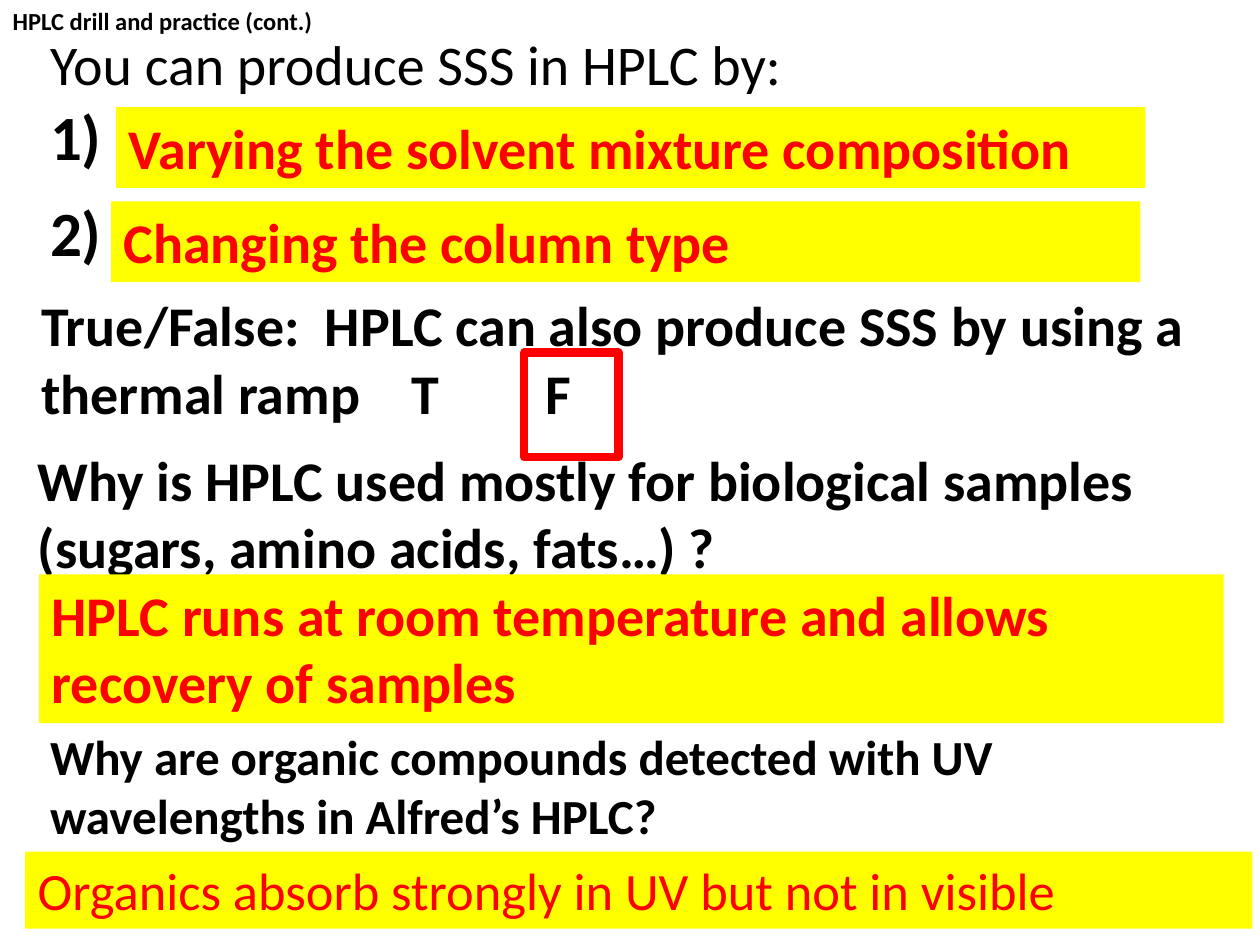
from lxml import etree
from pptx import Presentation
from pptx import util as u
from pptx.dml.color import RGBColor
from pptx.enum import shapes, text
from pptx.oxml.ns import qn

BLACK = RGBColor(0x00, 0x00, 0x00)
RED = RGBColor(0xFF, 0x00, 0x00)
YELLOW = RGBColor(0xFF, 0xFF, 0x00)
FONT = "Calibri"


def write_line(paragraph, words, size, color=BLACK, bold=True):
    paragraph.alignment = text.PP_ALIGN.LEFT
    run = paragraph.add_run()
    run.text = words
    run.font.name = FONT
    run.font.size = u.Pt(size)
    run.font.bold = bold
    run.font.color.rgb = color


def prepare_frame(shape):
    frame = shape.text_frame
    frame.word_wrap = True
    frame.auto_size = text.MSO_AUTO_SIZE.NONE
    frame.vertical_anchor = text.MSO_ANCHOR.TOP
    return frame


def lengths(*values):
    return [u.Cm(value) for value in values]


def add_prompt(slide, left, top, width, height, words, size=32, bold=True):
    shape = slide.shapes.add_textbox(*lengths(left, top, width, height))
    frame = prepare_frame(shape)
    write_line(frame.paragraphs[0], words, size, bold=bold)
    return frame


def add_rectangle(slide, left, top, width, height):
    shape = slide.shapes.add_shape(
        shapes.MSO_SHAPE.RECTANGLE, *lengths(left, top, width, height))
    shape.shadow.inherit = False
    return shape


def add_answer(slide, left, top, width, height, words, size=32, bold=True):
    shape = add_rectangle(slide, left, top, width, height)
    shape.fill.solid()
    shape.fill.fore_color.rgb = YELLOW
    shape.line.fill.background()
    write_line(prepare_frame(shape).paragraphs[0], words, size, RED, bold)


def place_title(slide, left, top, width, height):
    title = slide.shapes.title
    title.left, title.top, title.width, title.height = lengths(left, top, width, height)
    write_line(prepare_frame(title).paragraphs[0], "HPLC drill and practice (cont.)", 14)


def add_methods(slide, left, top):
    """Introduction and two numbered answers."""
    frame = add_prompt(slide, left, top, 17.15, 3.18,
                       "You can produce SSS in HPLC by:", bold=False)
    write_line(frame.add_paragraph(), "1)", 36)
    add_answer(slide, left + 1.58, top + 1.68, 20.75, 1.63,
               "Varying the solvent mixture composition")
    add_prompt(slide, left, top + 3.3, 2.11, 1.8, "2)", 36)
    add_answer(slide, left + 1.48, top + 3.58, 20.75, 1.63, "Changing the column type")


def add_true_false(slide, left, top, width, height):
    """Statement with the correct choice framed."""
    frame = add_prompt(
        slide, left, top, width, height,
        "True/False:  HPLC can also produce SSS by using a thermal ramp\tT\tF")
    # Tab stops line up the two choices
    properties = frame.paragraphs[0].runs[0].font  # run already formatted
    properties = frame.paragraphs[0]._p.get_or_add_pPr()
    tab_list = etree.SubElement(properties, qn("a:tabLst"))
    for position in (7.47, 10.16):
        etree.SubElement(tab_list, qn("a:tab"), pos=str(int(u.Cm(position))), algn="l")
    # Frame around F
    choice = add_rectangle(slide, left + 9.99, top + 1.37, 1.9, 2.11)
    choice.fill.background()
    choice.line.color.rgb = RED
    choice.line.width = u.Pt(4.75)


def add_biology_question(slide, left, top):
    add_prompt(slide, left, top, 23.93, 3,
               "Why is HPLC used mostly for biological samples "
               "(sugars, amino acids, fats…) ?")
    add_answer(slide, left + 0.28, top + 2.72, 23.88, 3,
               "HPLC runs at room temperature and allows recovery of samples")


def add_detection_question(slide, left, top):
    add_prompt(slide, left + 0.25, top, 24.77, 2.64,
               "Why are organic compounds detected with UV "
               "wavelengths in Alfred’s HPLC?", 28)
    add_answer(slide, left, top + 2.64, 24.74, 1.55,
               "Organics absorb strongly in UV but not in visible", 30, bold=False)


def main():
    presentation = Presentation()
    presentation.slide_width, presentation.slide_height = lengths(25.4, 19.05)
    slide = presentation.slides.add_slide(presentation.slide_layouts[5])
    place_title(slide, 0, 0, 14.81, 0.86)
    add_methods(slide, 0.76, 0.48)
    add_true_false(slide, 0.58, 5.74, 24.66, 3)
    add_biology_question(slide, 0.51, 8.86)
    add_detection_question(slide, 0.51, 14.53)
    presentation.save("out.pptx")


if __name__ == "__main__":
    main()
